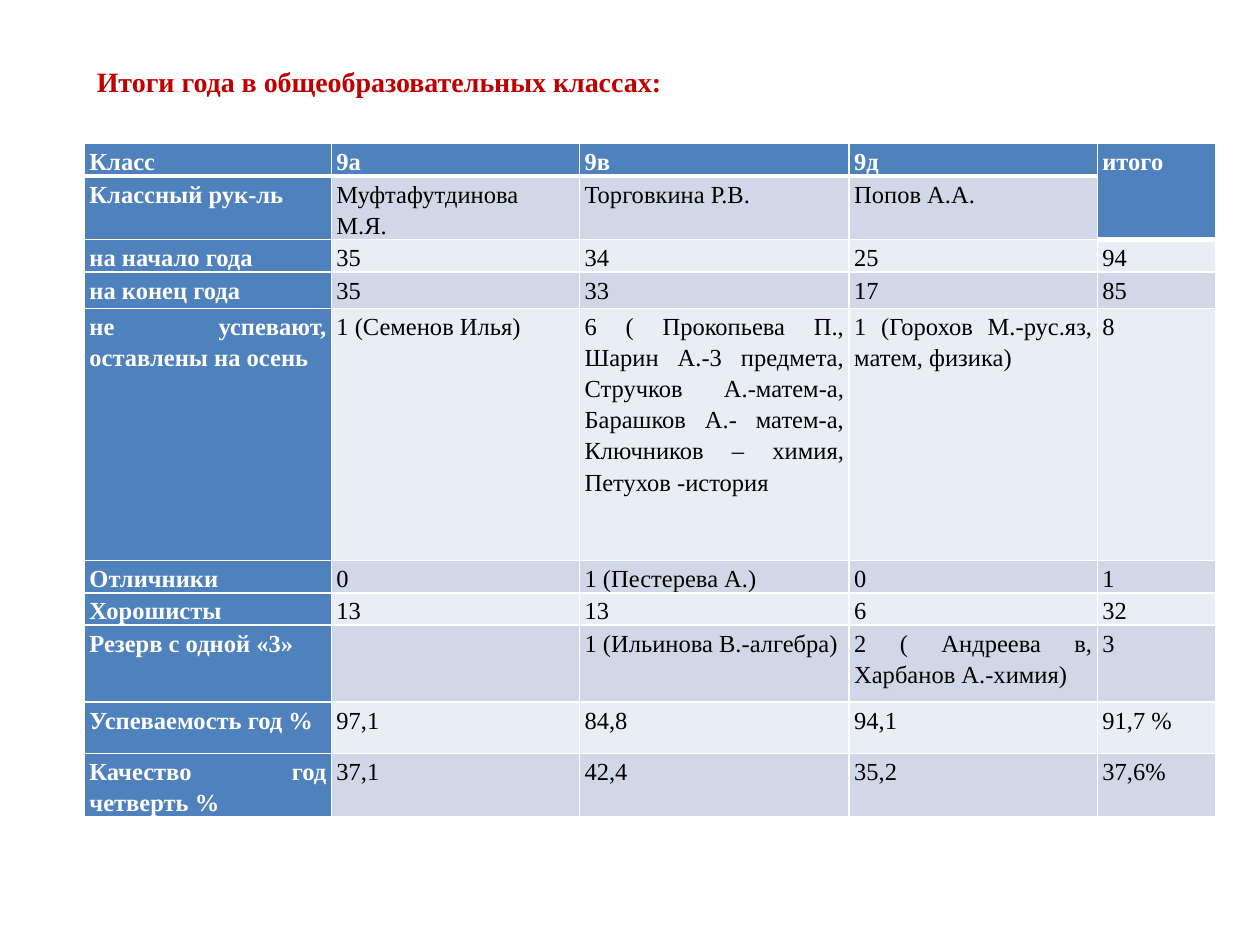
import dataclasses

import lxml.etree
import pptx
import pptx.dml.color
import pptx.enum.text
import pptx.oxml.ns
import pptx.util

RGBColor = pptx.dml.color.RGBColor
WHITE = RGBColor(0xFF, 0xFF, 0xFF)
BLACK = RGBColor(0x00, 0x00, 0x00)
RED = RGBColor(0xC0, 0x00, 0x00)
BLUE = RGBColor(0x4F, 0x81, 0xBD)
DARK_BAND = RGBColor(0xD0, 0xD8, 0xE8)
LIGHT_BAND = RGBColor(0xE9, 0xED, 0xF4)

FONT_NAME = "Times New Roman"
GRID_COLUMNS, GRID_ROWS = 100, 75
SLIDE_WIDTH = pptx.util.Inches(10)
SLIDE_HEIGHT = pptx.util.Inches(7.5)

LEFT = 6.7
TITLE_TOP, TITLE_WIDTH, TITLE_HEIGHT = 4.6, 68.5, 6.7
TABLE_TOP = 11.4
COLUMN_WIDTHS = (19.6, 19.7, 21.4, 19.7, 9.4)
LAST_COLUMN = len(COLUMN_WIDTHS) - 1
THIN, THICK = 1, 3

CELL_FORMAT = {
    "margin_left": pptx.util.Inches(0.04),
    "margin_top": pptx.util.Inches(0.01),
    "margin_right": pptx.util.Inches(0.04),
    "margin_bottom": 0,
}


@dataclasses.dataclass(frozen=True)
class ResultRow:
    height: float
    texts: tuple[str, ...]


RESULT_ROWS = (
    ResultRow(2.1, ("Класс ", "9а", "9в", "9д", "итого")),
    ResultRow(4.1, ("Классный рук-ль", "Муфтафутдинова М.Я.", "Торговкина Р.В.", "Попов А.А.", "")),
    ResultRow(2.1, ("на начало года", "35", "34", "25", "94")),
    ResultRow(2.9, ("на конец года", "35", "33", "17", "85")),
    ResultRow(20, (
        "не успевают, оставлены на осень",
        "1 (Семенов Илья)",
        "6 ( Прокопьева П., Шарин А.-3 предмета, Стручков А.-матем-а, "
        "Барашков А.- матем-а, Ключников – химия, Петухов -история",
        "1 (Горохов М.-рус.яз, матем, физика)",
        "8",
    )),
    ResultRow(2.1, ("Отличники", "0", "1 (Пестерева А.)", "0", "1")),
    ResultRow(2.1, ("Хорошисты", "13", "13", "6", "32")),
    ResultRow(6.1, (
        "Резерв с одной «3»", "", "1 (Ильинова В.-алгебра)",
        "2 ( Андреева в, Харбанов А.-химия)", "3",
    )),
    ResultRow(4.1, ("Успеваемость год %", "97,1", "84,8", "94,1", "91,7 %")),
    ResultRow(4.1, ("Качество год четверть %", "37,1", "42,4", "35,2", "37,6%")),
)


def across(columns: float) -> int:
    return round(SLIDE_WIDTH * columns / GRID_COLUMNS)


def down(rows: float) -> int:
    return round(SLIDE_HEIGHT * rows / GRID_ROWS)


def apply_format(target: object, values: dict) -> None:
    for name, value in values.items():
        setattr(target, name, value)


def write_text(paragraph, text: str, size: int, color: RGBColor, bold: bool) -> None:
    run = paragraph.add_run()
    run.text = text
    apply_format(run.font, {"name": FONT_NAME, "size": pptx.util.Pt(size), "bold": bold})
    run.font.color.rgb = color


def add_borders(cell, top: int, bottom: int) -> None:
    """Draw white cell borders; must run before the cell is filled."""
    properties = cell._tc.get_or_add_tcPr()
    widths = {"a:lnL": THIN, "a:lnR": THIN, "a:lnT": top, "a:lnB": bottom}
    for tag, width in widths.items():
        line = lxml.etree.SubElement(
            properties, pptx.oxml.ns.qn(tag), w=str(pptx.util.Pt(width)))
        fill = lxml.etree.SubElement(line, pptx.oxml.ns.qn("a:solidFill"))
        lxml.etree.SubElement(fill, pptx.oxml.ns.qn("a:srgbClr"), val=str(WHITE))


def format_cell(cell, row: int, column: int, text: str) -> None:
    last_header_row = 1 if column == LAST_COLUMN else 0
    is_heading = row <= last_header_row or column == 0
    apply_format(cell, CELL_FORMAT)
    add_borders(
        cell,
        top=THICK if row == last_header_row + 1 else THIN,
        bottom=THICK if row == last_header_row else THIN,
    )
    cell.fill.solid()
    band = DARK_BAND if row % 2 else LIGHT_BAND
    cell.fill.fore_color.rgb = BLUE if is_heading else band
    if text:
        paragraph = cell.text_frame.paragraphs[0]
        apply_format(paragraph, {
            "alignment": pptx.enum.text.PP_ALIGN.JUSTIFY, "line_spacing": 1.15})
        write_text(paragraph, text, 14, WHITE if is_heading else BLACK, is_heading)


def add_results_table(slide) -> None:
    table = slide.shapes.add_table(
        len(RESULT_ROWS), len(COLUMN_WIDTHS), across(LEFT), down(TABLE_TOP),
        across(sum(COLUMN_WIDTHS)), down(sum(row.height for row in RESULT_ROWS)),
    ).table
    apply_format(table, {"first_row": False, "horz_banding": False})
    for column, width in zip(table.columns, COLUMN_WIDTHS):
        column.width = across(width)
    for row_index, row in enumerate(RESULT_ROWS):
        table.rows[row_index].height = down(row.height)
        for column_index, text in enumerate(row.texts):
            format_cell(table.cell(row_index, column_index), row_index, column_index, text)
    table.cell(0, LAST_COLUMN).merge(table.cell(1, LAST_COLUMN))


def add_title(slide) -> None:
    text_frame = slide.shapes.add_textbox(
        across(LEFT), down(TITLE_TOP), across(TITLE_WIDTH), down(TITLE_HEIGHT)).text_frame
    apply_format(text_frame, {
        "word_wrap": True, "vertical_anchor": pptx.enum.text.MSO_ANCHOR.TOP})
    write_text(text_frame.paragraphs[0],
               "Итоги года в общеобразовательных классах:", 16, RED, True)


def main() -> None:
    presentation = pptx.Presentation()
    apply_format(presentation, {"slide_width": SLIDE_WIDTH, "slide_height": SLIDE_HEIGHT})
    slide = presentation.slides.add_slide(presentation.slide_layouts[6])
    add_results_table(slide)
    add_title(slide)
    presentation.save("out.pptx")


if __name__ == "__main__":
    main()
